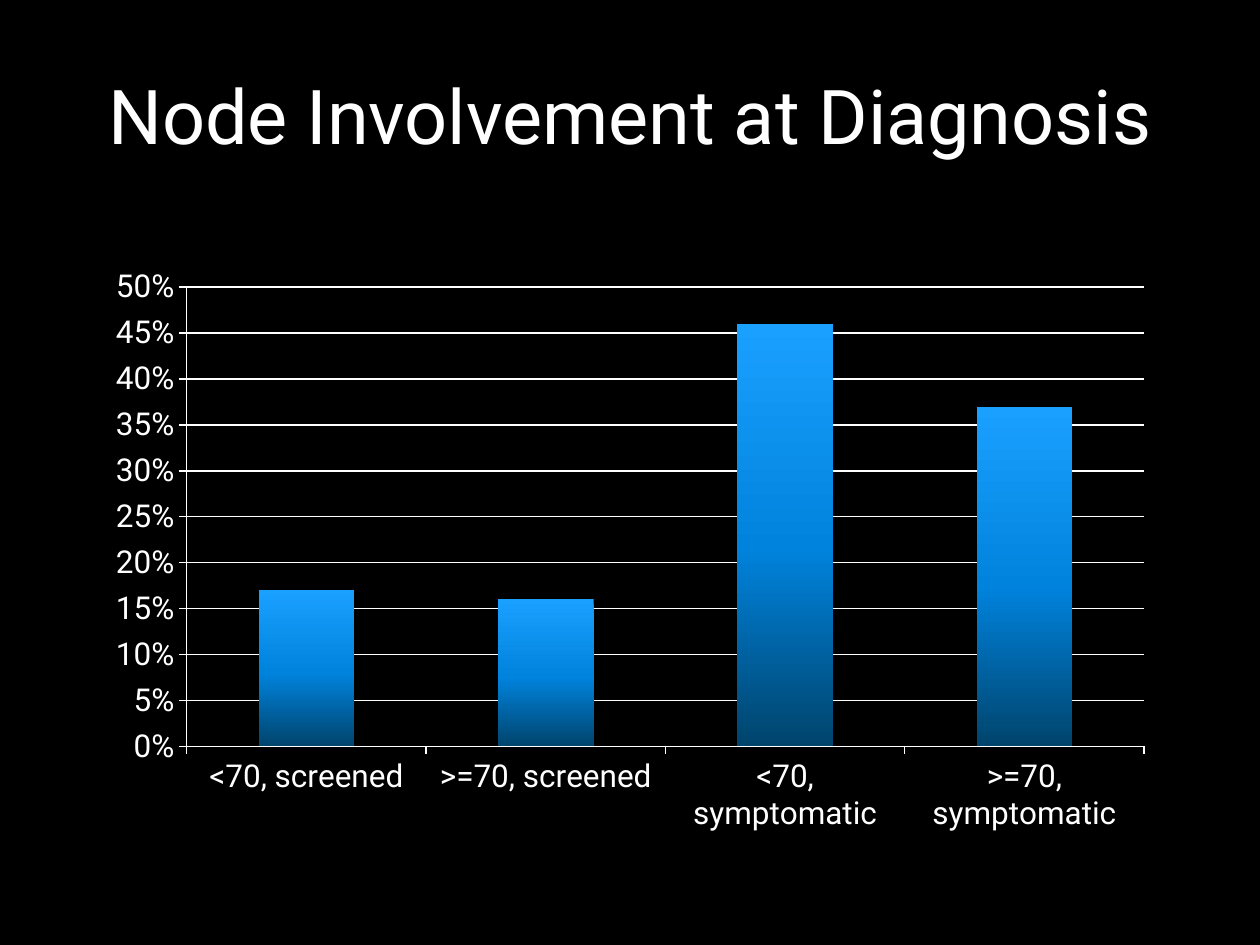
from copy import deepcopy

from pptx import Presentation
from pptx.chart.data import CategoryChartData as Data
from pptx.dml.color import RGBColor as RGB
from pptx.enum.chart import XL_CHART_TYPE as Kind, XL_TICK_MARK as Tick
from pptx.enum.text import MSO_ANCHOR as Anchor, PP_ALIGN as Align
from pptx.util import Inches, Pt

FACE = "Roboto"
WHITE = "FFFFFF"
SHADES = [(0, "1AA0FF"), (0.53, "0083DD"), (1, "00446C")]
RATES = {
    "<70, screened": 0.17,
    ">=70, screened": 0.16,
    "<70, symptomatic": 0.46,
    ">=70, symptomatic": 0.37,
}


def tint(color, code):
    color.rgb = RGB.from_string(code)


def style(font, size):
    font.name = FACE
    font.size = Pt(size)
    font.bold = False
    tint(font.color, WHITE)


def rule(line):
    line.width = Pt(0.75)
    tint(line.color, WHITE)


def set_title(slide, text):
    title = slide.shapes.title
    title.left, title.top = Inches(0.75), Inches(0.13)
    title.width, title.height = Inches(8.5), Inches(1.56)
    frame = title.text_frame
    frame.text = text
    frame.word_wrap = True
    frame.vertical_anchor = Anchor.MIDDLE
    para = frame.paragraphs[0]
    para.alignment = Align.CENTER
    style(para.font, 43.2)


def shade(chart, fill):
    """Fill the bars with a three-stop gradient, light at the top."""
    fill.gradient()
    fill.gradient_angle = 270
    stops = chart.element.xpath("//a:gsLst")[0]
    stops.append(deepcopy(stops[-1]))
    for stop, (place, code) in zip(fill.gradient_stops, SHADES):
        stop.position = place
        tint(stop.color, code)


def add_bars(slide):
    data = Data(number_format="0%")
    data.categories = list(RATES)
    data.add_series("Series 1", list(RATES.values()))
    chart = slide.shapes.add_chart(
        Kind.COLUMN_CLUSTERED, Inches(0.75), Inches(2.04),
        Inches(8.5), Inches(4.66), data).chart
    chart.has_title = chart.has_legend = False
    style(chart.font, 18)

    # Bars
    plot = chart.plots[0]
    plot.gap_width = 150
    plot.vary_by_categories = False
    shade(chart, plot.series[0].format.fill)

    # Axes
    for axis in (chart.category_axis, chart.value_axis):
        axis.major_tick_mark = Tick.OUTSIDE
        axis.minor_tick_mark = Tick.NONE
        rule(axis.format.line)
    rates = chart.value_axis
    rates.minimum_scale, rates.maximum_scale = 0, 0.5
    rates.major_unit = 0.05
    rates.has_major_gridlines = True
    rule(rates.major_gridlines.format.line)
    rates.tick_labels.number_format = "0%"
    rates.tick_labels.number_format_is_linked = False


def main():
    deck = Presentation()
    deck.slide_width, deck.slide_height = Inches(10), Inches(7.5)
    slide = deck.slides.add_slide(deck.slide_layouts[5])
    back = slide.background.fill
    back.solid()
    tint(back.fore_color, "000000")
    set_title(slide, "Node Involvement at Diagnosis")
    add_bars(slide)
    deck.save("out.pptx")


if __name__ == "__main__":
    main()
